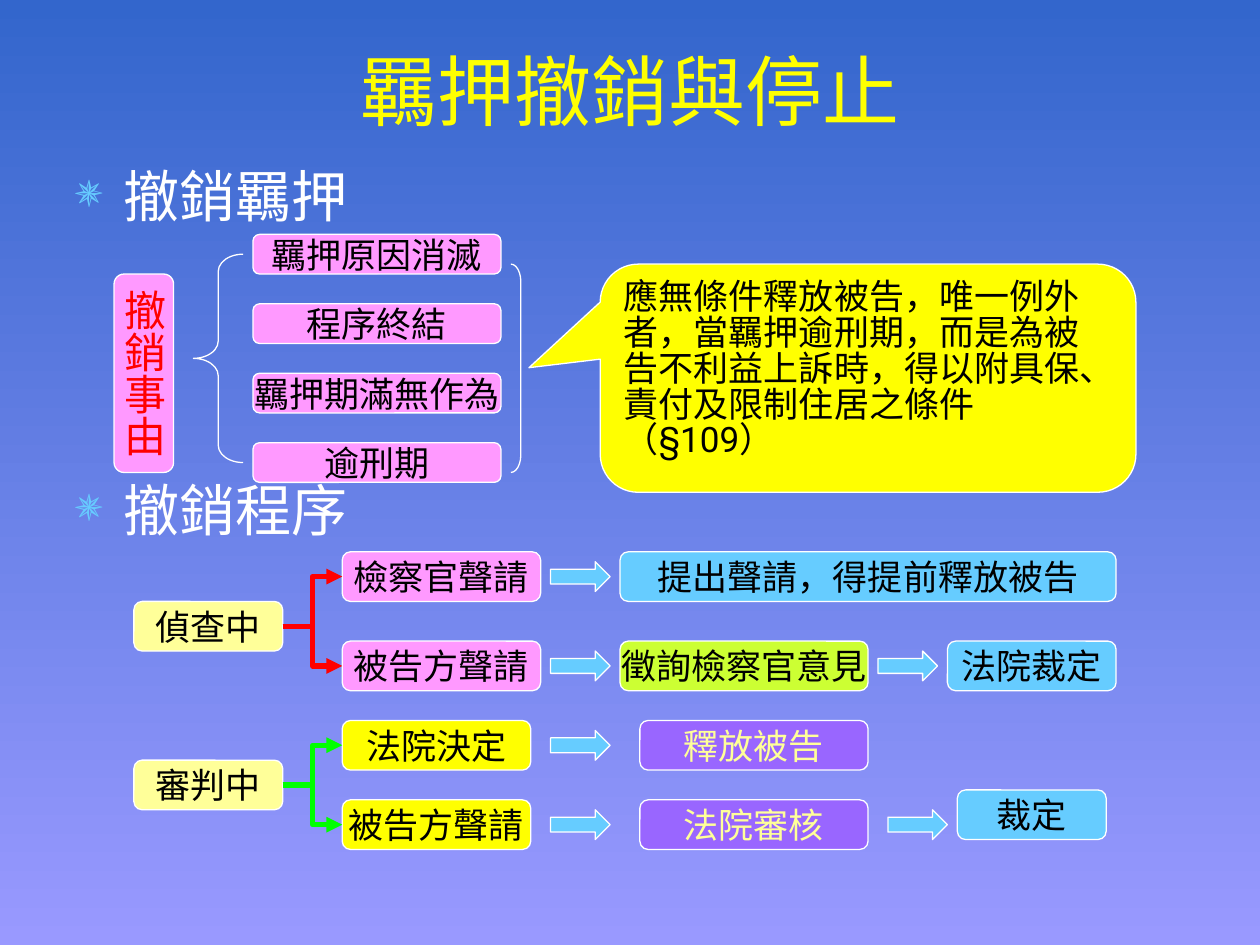
"""Builds the slide on revoking and suspending detention."""
from dataclasses import dataclass

from lxml import etree
from pptx import Presentation
from pptx.dml.color import RGBColor
from pptx.enum.shapes import MSO_CONNECTOR, MSO_SHAPE
from pptx.enum.text import MSO_ANCHOR, PP_ALIGN
from pptx.oxml.ns import qn
from pptx.util import Inches, Mm, Pt

BOX = MSO_SHAPE.FLOWCHART_ALTERNATE_PROCESS
ARROW = MSO_SHAPE.RIGHT_ARROW
BRACE = MSO_SHAPE.LEFT_BRACE
BRACKET = MSO_SHAPE.RIGHT_BRACKET
CALLOUT = MSO_SHAPE.ROUNDED_RECTANGULAR_CALLOUT
ELBOW = MSO_CONNECTOR.ELBOW
CENTER, LEFT = PP_ALIGN.CENTER, PP_ALIGN.LEFT
MIDDLE, TOP = MSO_ANCHOR.MIDDLE, MSO_ANCHOR.TOP
LEFT_SITE, RIGHT_SITE = 1, 3


@dataclass(frozen=True)
class Theme:
    """Colours, fonts and type sizes."""
    sky: str = "3366CC"
    dusk: str = "9999FF"
    white: str = "FFFFFF"
    black: str = "000000"
    yellow: str = "FFFF00"
    cream: str = "FFFF99"
    pink: str = "FF99FF"
    blue: str = "66CCFF"
    lime: str = "CCFF33"
    purple: str = "9966FF"
    red: str = "FF0000"
    green: str = "00FF00"
    heading_font: str = "Arial"
    label_font: str = "Roboto"
    title: int = 44
    heading: int = 32
    tag: int = 24
    label: int = 20
    outline: float = 0.75
    branch: int = 3


THEME = Theme()


def rgb(value):
    """Turn a hex string into a colour."""
    return RGBColor.from_string(value)


def grid(col, row, cols, rows):
    """Place a cell range on the 2 mm grid, whose origin is slightly inset."""
    return Mm(2 * col + 1), Mm(2 * row + 1.25), Mm(2 * cols), Mm(2 * rows)


def set_font(paragraph, face, size, color):
    """Set the type of a whole paragraph."""
    paragraph.font.name = face
    paragraph.font.size = Pt(size)
    paragraph.font.color.rgb = rgb(color)


def paint_background(slide):
    """Fill the background with a downward gradient."""
    fill = slide.background.fill
    fill.gradient()
    fill.gradient_angle = 270
    for stop, color in zip(fill.gradient_stops, (THEME.sky, THEME.dusk)):
        stop.color.rgb = rgb(color)


def add_title(slide, text):
    """Add the centred title."""
    frame = slide.shapes.add_textbox(
        Inches(0.33), Inches(0.25), Inches(9.34), Inches(0.93)).text_frame
    frame.word_wrap = True
    frame.vertical_anchor = MIDDLE
    title = frame.paragraphs[0]
    title.text = text
    title.alignment = CENTER
    set_font(title, THEME.heading_font, THEME.title, THEME.yellow)


def add_bullet(paragraph):
    """Give a paragraph a hanging star bullet."""
    props = paragraph._p.get_or_add_pPr()
    props.set("marL", str(Inches(0.38)))
    props.set("indent", str(-Inches(0.38)))
    color = etree.SubElement(props, qn("a:buClr"))
    etree.SubElement(color, qn("a:srgbClr")).set("val", THEME.blue)
    etree.SubElement(props, qn("a:buSzPct")).set("val", "85000")
    etree.SubElement(props, qn("a:buChar")).set("char", "✵")


def add_headings(slide, headings):
    """Add the section headings, each with the space before it in points."""
    frame = slide.shapes.add_textbox(
        Inches(0.5), Inches(1.23), Inches(9), Inches(5.75)).text_frame
    frame.word_wrap = True
    for index, (text, space) in enumerate(headings):
        heading = frame.add_paragraph() if index else frame.paragraphs[0]
        heading.text = text
        heading.space_before = Pt(space)
        add_bullet(heading)
        set_font(heading, THEME.heading_font, THEME.heading, THEME.white)


def add_figure(slide, kind, cells, fill=None, adjustments=()):
    """Add a white-outlined preset shape on the grid."""
    figure = slide.shapes.add_shape(kind, *grid(*cells))
    figure.shadow.inherit = False
    figure.line.color.rgb = rgb(THEME.white)
    figure.line.width = Pt(THEME.outline)
    if fill:
        figure.fill.solid()
        figure.fill.fore_color.rgb = rgb(fill)
    else:
        figure.fill.background()
    for index, value in enumerate(adjustments):
        figure.adjustments[index] = value
    return figure


def add_box(slide, text, cells, fill, color=THEME.black, size=THEME.label):
    """Add a rounded box with a centred label."""
    box = add_figure(slide, BOX, cells, fill)
    box.text_frame.word_wrap = False
    box.text_frame.vertical_anchor = MIDDLE
    label = box.text_frame.paragraphs[0]
    label.text = text
    label.alignment = CENTER
    set_font(label, THEME.label_font, size, color)
    return box


def add_tag(slide, text, cells):
    """Add a box whose label runs downwards."""
    tag = add_box(slide, text, cells, THEME.pink, THEME.red, THEME.tag)
    tag.text_frame._txBody.bodyPr.set("vert", "eaVert")


def add_callout(slide, text, cells):
    """Add the explanatory speech bubble."""
    bubble = add_figure(slide, CALLOUT, cells, THEME.yellow, (-0.633, -0.046, 0.167))
    bubble.text_frame.word_wrap = True
    bubble.text_frame.vertical_anchor = TOP
    note = bubble.text_frame.paragraphs[0]
    note.text = text
    note.alignment = LEFT
    note.line_spacing = 0.85
    set_font(note, THEME.label_font, THEME.label, THEME.black)


def add_branches(slide, stage, steps, color):
    """Link a stage to each of its first steps with elbow arrows."""
    for step in steps:
        branch = slide.shapes.add_connector(ELBOW, 0, 0, 0, 0)
        branch.begin_connect(stage, RIGHT_SITE)
        branch.end_connect(step, LEFT_SITE)
        branch.line.color.rgb = rgb(color)
        branch.line.width = Pt(THEME.branch)
        etree.SubElement(branch.line._get_or_add_ln(), qn("a:tailEnd")).set("type", "triangle")
        etree.SubElement(branch._element.spPr, qn("a:effectLst"))


def add_grounds(slide):
    """Add the grounds for revocation and their consequence."""
    add_tag(slide, "撤銷事由", (11, 27, 6, 20))
    grounds = ("羈押原因消滅", "程序終結", "羈押期滿無作為", "逾刑期")
    for index, ground in enumerate(grounds):
        add_box(slide, ground, (25, 23 + 7 * index, 25, 4), THEME.pink)
    add_figure(slide, BRACE, (19, 25, 5, 21), adjustments=(0.349, 0.5))
    add_figure(slide, BRACKET, (51, 26, 1, 21), adjustments=(1.763,))
    add_callout(slide, "應無條件釋放被告，唯一例外者，當羈押逾刑期，而是為被告不利益上訴時，"
                "得以附具保、責付及限制住居之條件（§109）", (60, 26, 54, 23))


def add_procedure(slide):
    """Add the procedure flows of both stages."""
    t = THEME
    stages = (
        ("偵查中", 60, t.red, t.pink, 20, (("檢察官聲請", 55), ("被告方聲請", 64))),
        ("審判中", 76, t.green, t.yellow, 19, (("法院決定", 72), ("被告方聲請", 80))),
    )
    for name, row, color, fill, cols, first_steps in stages:
        stage = add_box(slide, name, (13, row, 15, 5), t.cream)
        steps = [add_box(slide, text, (34, top, cols, 5), fill) for text, top in first_steps]
        add_branches(slide, stage, steps, color)

    outcomes = (
        ("提出聲請，得提前釋放被告", 62, 55, 50, t.blue, t.black),
        ("徵詢檢察官意見", 62, 64, 25, t.lime, t.black),
        ("法院裁定", 95, 64, 17, t.blue, t.black),
        ("釋放被告", 64, 72, 23, t.purple, t.cream),
        ("法院審核", 64, 80, 23, t.purple, t.cream),
        ("裁定", 96, 79, 15, t.blue, t.black),
    )
    for text, col, row, cols, fill, color in outcomes:
        add_box(slide, text, (col, row, cols, 5), fill, color)
    for col, row in ((55, 55), (55, 64), (88, 64), (55, 72), (55, 80), (89, 80)):
        add_figure(slide, ARROW, (col, row + 1, 6, 3), t.blue)


def main():
    """Build and save the slide."""
    deck = Presentation()
    deck.slide_width, deck.slide_height = Inches(10), Inches(7.5)
    slide = deck.slides.add_slide(deck.slide_layouts[6])
    paint_background(slide)
    add_title(slide, "羈押撤銷與停止")
    add_headings(slide, (("撤銷羈押", 6.4), ("撤銷程序", 141)))
    add_grounds(slide)
    add_procedure(slide)
    deck.save("out.pptx")


if __name__ == "__main__":
    main()
